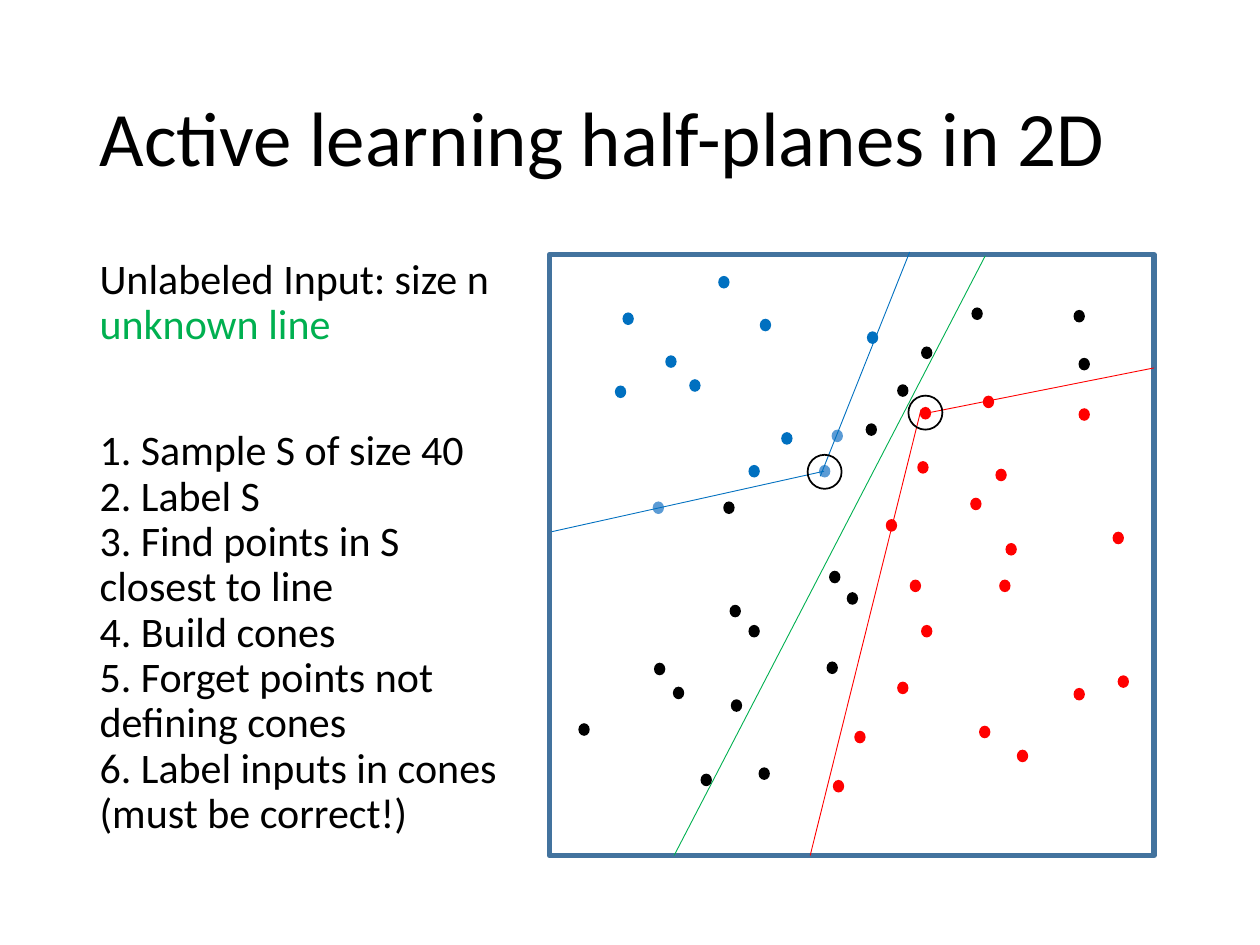
"""Build the slide on active learning of half-planes in 2D."""
from pptx import Presentation
from pptx.dml.color import RGBColor
from pptx.enum.shapes import MSO_CONNECTOR, MSO_SHAPE
from pptx.enum.text import MSO_ANCHOR, MSO_AUTO_SIZE, PP_ALIGN
from pptx.oxml.ns import qn
from pptx.util import Pt
from lxml.etree import SubElement

SCALE = 9144
FONT = "Calibri"
BLACK = RGBColor(0x00, 0x00, 0x00)
GREEN = RGBColor(0x00, 0xB0, 0x50)
RED = RGBColor(0xFF, 0x00, 0x00)
BLUE = RGBColor(0x00, 0x70, 0xC0)
LIGHT = RGBColor(0x5B, 0x9B, 0xD5)
FRAME = RGBColor(0x43, 0x73, 0x9E)

STEPS = [
    "1. Sample S of size 40",
    "2. Label S",
    "3. Find points in S closest to line",
    "4. Build cones",
    "5. Forget points not defining cones ",
    "6. Label inputs in cones",
    "(must be correct!)",
]
UNDER = [
    (LIGHT, [(518, 398), (650, 369), (660, 341)]),
    (RED, [(780, 314), (730, 323), (703, 412)]),
]
LINES = [
    (GREEN, 782, 203, 535, 679),
    (RED, 730, 329, 916, 292),
    (RED, 731, 325, 643, 679),
    (BLUE, 438, 422, 654, 374),
    (BLUE, 651, 378, 722, 200),
]
OVER = [
    (BLUE, [(494, 248), (488, 306), (528, 282), (688, 263), (620, 343),
            (570, 219), (547, 301), (603, 253), (594, 369)]),
    (BLACK, [(731, 275), (574, 398), (519, 526), (459, 574), (580, 555),
             (579, 480), (556, 614), (602, 609), (672, 470), (771, 244),
             (852, 246), (687, 336), (594, 496), (534, 545), (656, 525),
             (658, 453), (712, 305), (856, 284)]),
    (RED, [(722, 460), (712, 541), (793, 460), (777, 576), (807, 595),
           (661, 619), (678, 580), (798, 431), (731, 496), (883, 422),
           (852, 546), (728, 366), (887, 536), (770, 395), (856, 324),
           (790, 372)]),
]
RINGS = [(721, 314), (641, 361)]


def px(size):
    """Turn px into EMU."""
    return size * SCALE


def place(shape, *box):
    """Move a placeholder to a box and turn off its autofit."""
    shape.left, shape.top, shape.width, shape.height = map(px, box)
    shape.text_frame.auto_size = MSO_AUTO_SIZE.NONE
    shape.text_frame.word_wrap = True


def write(para, lines, size, gap=0):
    """Fill a paragraph with coloured lines, one run each."""
    para.alignment = PP_ALIGN.LEFT
    para.line_spacing = 0.9
    para.space_before = Pt(gap)
    for i, (text, color) in enumerate(lines):
        if i:
            para.add_line_break()
        run = para.add_run()
        run.text = text
        run.font.name = FONT
        run.font.size = Pt(size)
        run.font.color.rgb = color


def plain(para):
    """Take away the bullet and indent of a paragraph."""
    props = para._p.get_or_add_pPr()
    props.set("marL", "0")
    props.set("indent", "0")
    SubElement(props, qn("a:buNone"))


def add_shape(slide, kind, box, fill=None, line=None, width=1):
    """Add a preset shape with an optional fill and outline."""
    shape = slide.shapes.add_shape(kind, *map(px, box))
    shape.shadow.inherit = False
    if fill is None:
        shape.fill.background()
    else:
        shape.fill.solid()
        shape.fill.fore_color.rgb = fill
    if line is None:
        shape.line.fill.background()
    else:
        shape.line.color.rgb = line
        shape.line.width = Pt(width)


def add_dots(slide, groups):
    """Add the data points of each colour."""
    for color, spots in groups:
        for x, y in spots:
            add_shape(slide, MSO_SHAPE.OVAL, (x, y, 9, 10), fill=color)


def add_line(slide, color, *ends):
    """Add a thin straight line."""
    line = slide.shapes.add_connector(MSO_CONNECTOR.STRAIGHT, *map(px, ends))
    line.line.color.rgb = color
    line.line.width = Pt(0.5)
    SubElement(line._element.spPr, qn("a:effectLst"))


def add_text(slide):
    """Fill the title and the list of steps."""
    title, body = slide.shapes.title, slide.placeholders[1]
    place(title, 69, 40, 862, 145)
    title.text_frame.vertical_anchor = MSO_ANCHOR.MIDDLE
    write(title.text_frame.paragraphs[0],
          [("Active learning half-planes in 2D", BLACK)], 44)
    place(body, 69, 200, 358, 476)
    frame = body.text_frame
    intro, steps = frame.paragraphs[0], frame.add_paragraph()
    write(intro, [("Unlabeled Input: size n", BLACK),
                  ("unknown line", GREEN)], 24, 10)
    write(steps, [(step, BLACK) for step in STEPS], 24, 46)
    for para in (intro, steps):
        plain(para)


def main():
    """Build and save the slide."""
    deck = Presentation()
    deck.slide_width, deck.slide_height = px(1000), px(750)
    slide = deck.slides.add_slide(deck.slide_layouts[1])
    add_text(slide)
    add_shape(slide, MSO_SHAPE.RECTANGLE, (436, 202, 480, 477),
              line=FRAME, width=3)
    add_dots(slide, UNDER)
    for line in LINES:
        add_line(slide, *line)
    add_dots(slide, OVER)
    for x, y in RINGS:
        add_shape(slide, MSO_SHAPE.OVAL, (x, y, 27, 27), line=BLACK)
    deck.save("out.pptx")


if __name__ == "__main__":
    main()
